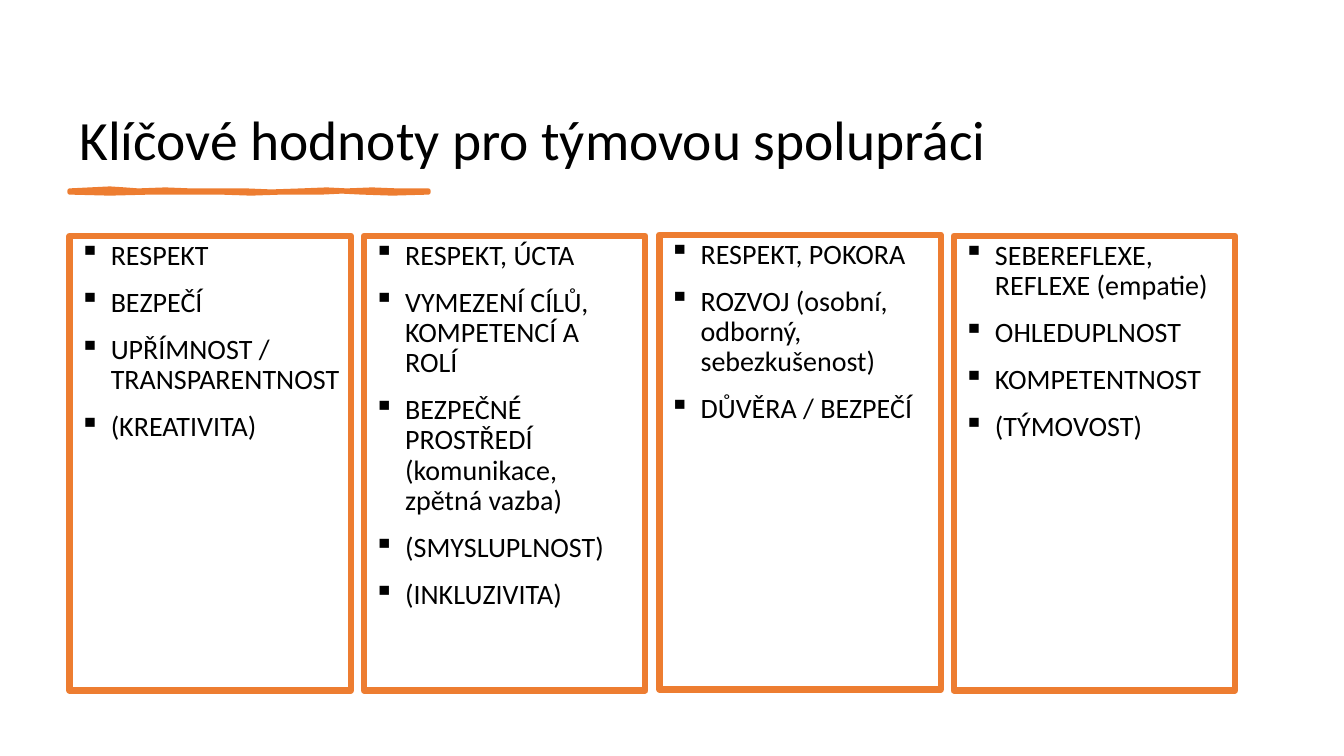
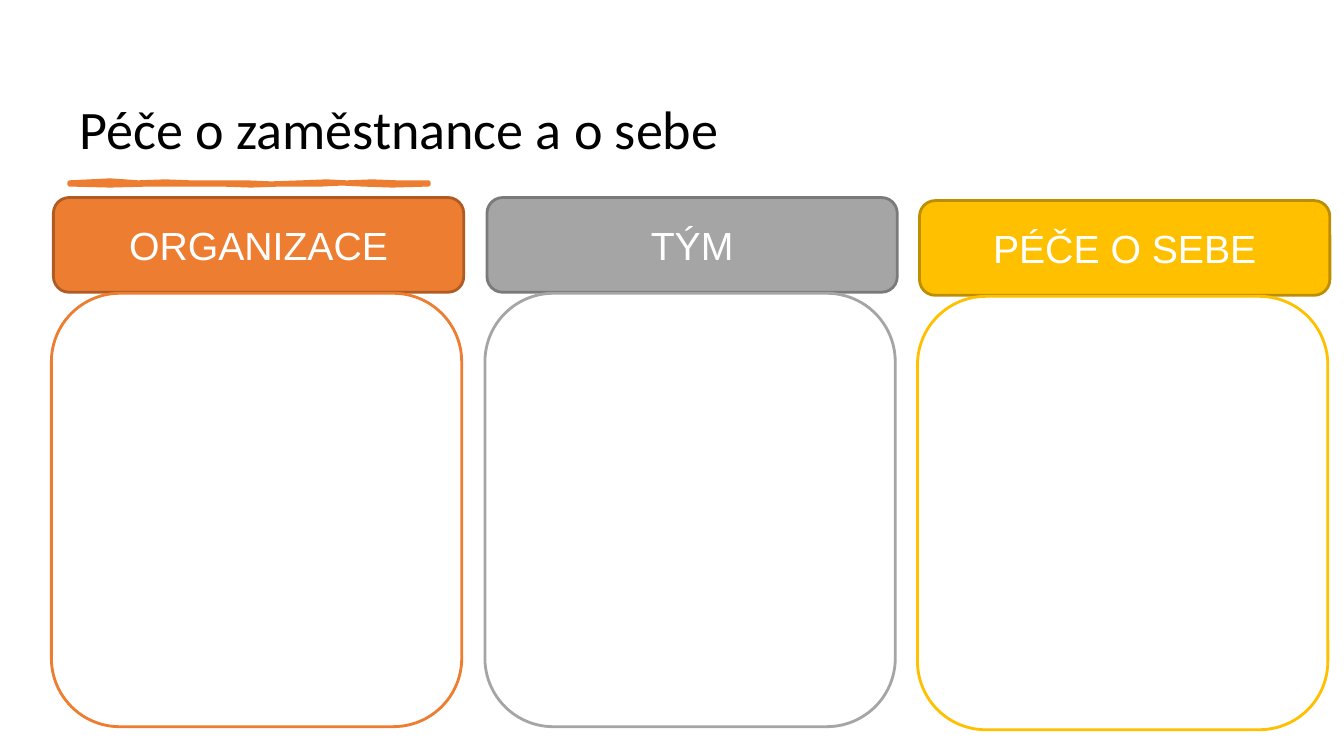
from dataclasses import dataclass
from typing import Any

from lxml.etree import SubElement
from pptx import Presentation
from pptx.dml.color import RGBColor
from pptx.enum.shapes import MSO_SHAPE as Preset
from pptx.enum.text import MSO_ANCHOR as Anchor, PP_ALIGN as Align
from pptx.oxml.ns import qn
from pptx.util import Inches, Pt

COLORS = {
    "text": "000000",
    "white": "FFFFFF",
    "orange": "ED7D31",
    "orange_dark": "AF5C24",
    "gray": "A5A5A5",
    "gray_dark": "7A7A7A",
    "yellow": "FFC000",
    "yellow_dark": "BD8E00",
}
LEFT = 0.69
UNDERLINE = [
    (0, 0), (0.2, -0.01), (0.4, -0.02), (0.55, -0.01), (0.68, 0), (0.95, -0.01),
    (1.2, 0), (1.5, 0), (1.75, 0), (2.0, 0.01), (2.3, 0), (2.55, -0.01),
    (2.75, 0), (3.0, -0.01), (3.25, 0), (3.56, 0),
    (3.56, 0.02), (3.2, 0.03), (2.9, 0.02), (2.7, 0.01), (2.5, 0.02), (2.1, 0.02),
    (1.8, 0.03), (1.5, 0.02), (1.2, 0.02), (0.8, 0.02), (0.4, 0.03), (0, 0.02),
]


@dataclass
class Box:
    left: float
    top: float
    width: float
    height: float


@dataclass
class ValueColumn:
    top: float
    values: list[str]


@dataclass
class CareColumn:
    label: str
    color: str
    left: float
    top: float


VALUE_COLUMNS = [
    ValueColumn(2.34, ["RESPEKT", "BEZPEČÍ", "UPŘÍMNOST / TRANSPARENTNOST", "(KREATIVITA)"]),
    ValueColumn(2.34, [
        "RESPEKT, ÚCTA",
        "VYMEZENÍ CÍLŮ, KOMPETENCÍ A ROLÍ",
        "BEZPEČNÉ PROSTŘEDÍ (komunikace, zpětná vazba)",
        "(SMYSLUPLNOST)",
        "(INKLUZIVITA)",
    ]),
    ValueColumn(2.33, [
        "RESPEKT, POKORA",
        "ROZVOJ (osobní, odborný, sebezkušenost)",
        "DŮVĚRA / BEZPEČÍ",
    ]),
    ValueColumn(2.34, [
        "SEBEREFLEXE, REFLEXE (empatie)",
        "OHLEDUPLNOST",
        "KOMPETENTNOST",
        "(TÝMOVOST)",
    ]),
]
CARE_COLUMNS = [
    CareColumn("ORGANIZACE", "orange", 0.53, 1.96),
    CareColumn("TÝM", "gray", 4.83, 1.96),
    CareColumn("PÉČE O SEBE", "yellow", 9.12, 1.99),
]


def rgb(name: str) -> RGBColor:
    return RGBColor.from_string(COLORS[name])


def apply_format(target: Any, values: dict[str, Any]) -> None:
    for name, value in values.items():
        setattr(target, name, value)


def add_text(paragraph: Any, text: str, font: str, size: float, color: str) -> None:
    run = paragraph.add_run()
    run.text = text
    apply_format(run.font, {"name": font, "size": Pt(size)})
    run.font.color.rgb = rgb(color)


def style_shape(shape: Any, fill: str | None, line: str, width: float) -> None:
    shape.shadow.inherit = False
    if fill:
        shape.fill.solid()
        shape.fill.fore_color.rgb = rgb(fill)
    else:
        shape.fill.background()
    shape.line.color.rgb = rgb(line)
    shape.line.width = Pt(width)
    SubElement(shape.line._get_or_add_ln(), qn("a:round"))


def add_box(slide: Any, preset: Any, box: Box, fill: str | None, line: str, width: float) -> Any:
    shape = slide.shapes.add_shape(
        preset, Inches(box.left), Inches(box.top), Inches(box.width), Inches(box.height)
    )
    style_shape(shape, fill, line, width)
    return shape


def add_heading(slide: Any, title: str, box: Box, size: float, underline_top: float) -> None:
    text_box = slide.shapes.add_textbox(
        Inches(box.left), Inches(box.top), Inches(box.width), Inches(box.height)
    )
    apply_format(text_box.text_frame, {"word_wrap": True, "vertical_anchor": Anchor.BOTTOM})
    paragraph = text_box.text_frame.paragraphs[0]
    paragraph.line_spacing = 0.9
    add_text(paragraph, title, "Calibri", size, "text")

    points = [(Inches(LEFT + x), Inches(underline_top + y)) for x, y in UNDERLINE]
    builder = slide.shapes.build_freeform(*points[0])
    builder.add_line_segments(points[1:], close=True)
    style_shape(builder.convert_to_shape(), "orange", "orange", 3)


def add_bullet(paragraph: Any) -> None:
    properties = paragraph._p.get_or_add_pPr()
    indent = Inches(0.31)
    properties.set("marL", str(indent))
    properties.set("indent", str(-indent))
    color = SubElement(properties, qn("a:buClr"))
    SubElement(color, qn("a:srgbClr"), val=COLORS["text"])
    SubElement(properties, qn("a:buChar"), char="▪")


def add_value_column(slide: Any, index: int, column: ValueColumn) -> None:
    box = Box(round(LEFT + index * 2.924, 2), column.top, 2.79, 4.51)
    shape = add_box(slide, Preset.RECTANGLE, box, None, "orange", 4.5)
    frame = shape.text_frame
    apply_format(frame, {"word_wrap": True, "vertical_anchor": Anchor.TOP})
    for number, value in enumerate(column.values):
        paragraph = frame.add_paragraph() if number else frame.paragraphs[0]
        apply_format(paragraph, {
            "alignment": Align.LEFT,
            "line_spacing": 0.9,
            "space_before": Pt(12 if number else 0),
        })
        add_bullet(paragraph)
        add_text(paragraph, value, "Calibri", 20, "text")


def add_care_column(slide: Any, column: CareColumn) -> None:
    header_box = Box(column.left, column.top, 4.07, 0.94)
    body_box = Box(column.left - 0.02, column.top + 0.95, 4.07, 4.3)
    header = add_box(
        slide, Preset.ROUNDED_RECTANGLE, header_box, column.color, f"{column.color}_dark", 2
    )
    header.text_frame.vertical_anchor = Anchor.MIDDLE
    paragraph = header.text_frame.paragraphs[0]
    paragraph.alignment = Align.CENTER
    add_text(paragraph, column.label, "Arial", 28, "white")
    add_box(slide, Preset.ROUNDED_RECTANGLE, body_box, "white", column.color, 2)


def main() -> None:
    presentation = Presentation()
    apply_format(presentation, {"slide_width": Inches(13.33), "slide_height": Inches(7.5)})
    blank = presentation.slide_layouts[6]

    values_slide = presentation.slides.add_slide(blank)
    add_heading(
        values_slide, "Klíčové hodnoty pro týmovou spolupráci", Box(LEFT, 0.86, 9.88, 0.9), 39.6, 1.89
    )
    for index, column in enumerate(VALUE_COLUMNS):
        add_value_column(values_slide, index, column)

    care_slide = presentation.slides.add_slide(blank)
    add_heading(care_slide, "Péče o zaměstnance a o sebe", Box(LEFT, 0.7, 6.9, 0.95), 38.7, 1.81)
    for column in CARE_COLUMNS:
        add_care_column(care_slide, column)

    presentation.save("out.pptx")


if __name__ == "__main__":
    main()
